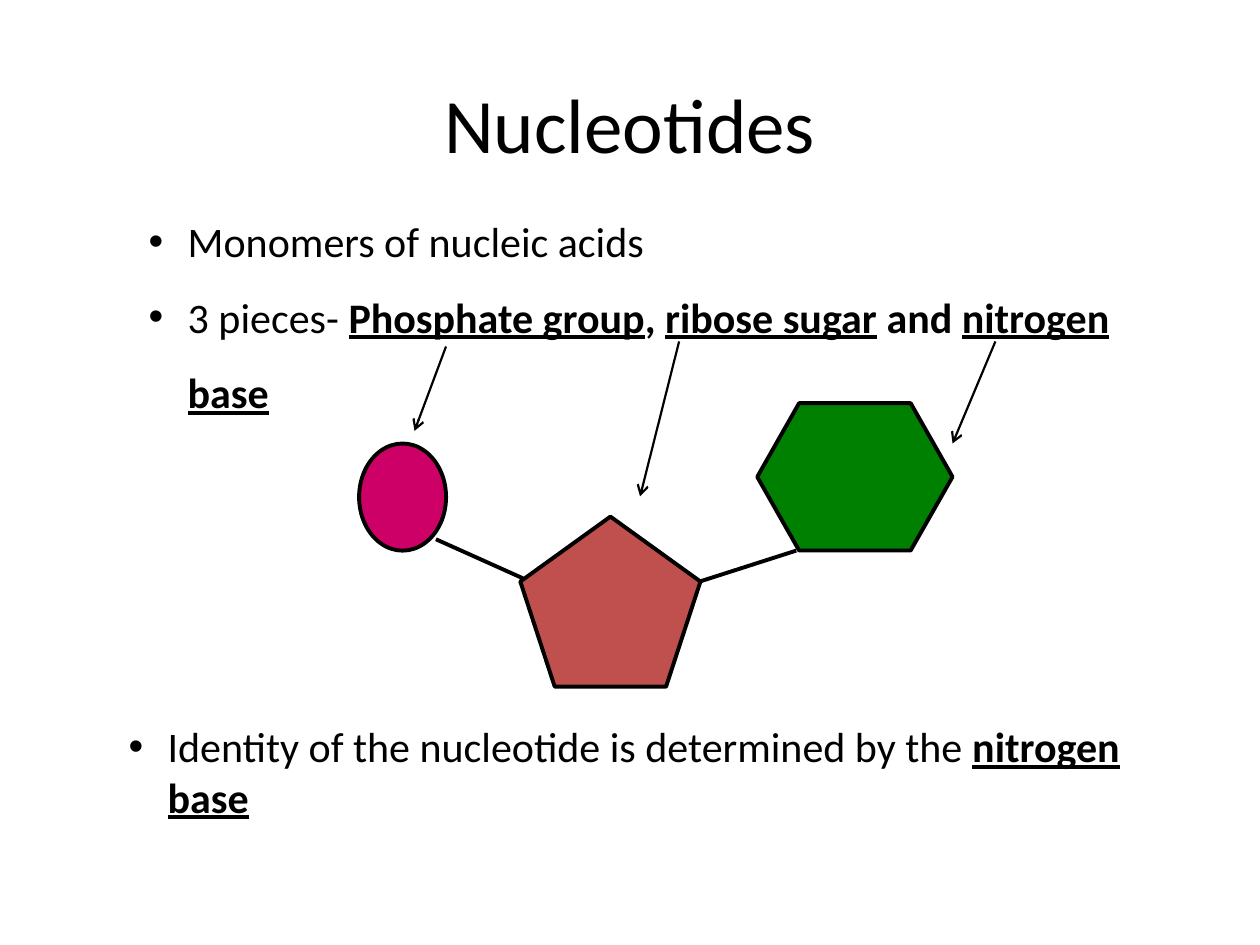
import pptx
import pptx.dml.color
import pptx.enum.shapes
import pptx.enum.text
import pptx.oxml.ns
import pptx.oxml.xmlchemy
import pptx.util
from pptx.util import Inches

SHAPE = pptx.enum.shapes.MSO_SHAPE
THEME = {
    "font": "Calibri", "ink": "000000",
    "title_size": 44, "body_size": 24,
    "outline": 2.25, "pointer": 1.25,
    "phosphate": "CC0066", "sugar": "C0504D", "base": "008000",
}

# Content: boxes are left, top, width, height in inches
TITLE = "Nucleotides"
TITLE_BOX = (0.75, 0.17, 8.5, 1.61)
PLAIN, BOLD, KEY = (False, False), (True, False), (True, True)  # bold, underline
LISTS = [
    {"box": (1.08, 1.46, 8.25, 4.34), "line_spacing": 1.5, "items": [
        [("Monomers of nucleic acids", PLAIN)],
        [("3 pieces- ", PLAIN), ("Phosphate group", KEY), (", ", BOLD),
         ("ribose sugar", KEY), (" and ", BOLD), ("nitrogen base", KEY)],
    ]},
    {"box": (0.92, 5.67, 8.33, 0.91), "line_spacing": 1.0, "items": [
        [("Identity of the nucleotide is determined by the ", PLAIN),
         ("nitrogen base", KEY)],
    ]},
]
PIECES = [
    (SHAPE.OVAL, (2.85, 3.52, 0.69, 0.85), "phosphate", ()),
    (SHAPE.REGULAR_PENTAGON, (4.13, 4.1, 1.43, 1.35), "sugar", ()),
    (SHAPE.HEXAGON, (6.01, 3.2, 1.55, 1.17), "base", (0.284,)),
]
BONDS = [(3.46, 4.28, 4.15, 4.59), (5.54, 4.62, 6.32, 4.37)]
POINTERS = [(3.54, 2.75, 3.29, 3.42), (5.39, 2.71, 5.08, 3.94),
            (7.9, 2.71, 7.56, 3.52)]


def inches(values):
    return [Inches(value) for value in values]


def color(key):
    return pptx.dml.color.RGBColor.from_string(THEME[key])


def place(holder, box):
    holder.left, holder.top, holder.width, holder.height = inches(box)


def add_element(parent, tag, **attributes):
    element = pptx.oxml.xmlchemy.OxmlElement(tag)
    for key, value in attributes.items():
        element.set(key, value)
    parent.append(element)


def add_run(paragraph, text, size, style=PLAIN):
    run = paragraph.add_run()
    run.text = text
    font = run.font
    font.name, font.size = THEME["font"], pptx.util.Pt(THEME[size])
    font.color.rgb = color("ink")
    font.bold, font.underline = style


def add_bullet(paragraph):
    properties = paragraph._p.get_or_add_pPr()
    properties.set("marL", str(Inches(0.31)))
    properties.set("indent", str(-Inches(0.31)))
    add_element(properties, "a:buChar", char="•")


def fill_list(holder, content):
    place(holder, content["box"])
    frame = holder.text_frame
    frame.word_wrap = True
    frame.auto_size = pptx.enum.text.MSO_AUTO_SIZE.SHAPE_TO_FIT_TEXT
    for number, item in enumerate(content["items"]):
        paragraph = frame.add_paragraph() if number else frame.paragraphs[0]
        add_bullet(paragraph)
        paragraph.line_spacing = content["line_spacing"]
        paragraph.space_before = pptx.util.Pt(0)
        for text, style in item:
            add_run(paragraph, text, "body_size", style)


def style_line(line, width):
    line.color.rgb = color("ink")
    line.width = pptx.util.Pt(THEME[width])


def add_line(shapes, ends, width, arrow=False):
    connector = shapes.add_connector(
        pptx.enum.shapes.MSO_CONNECTOR.STRAIGHT, *inches(ends))
    style_line(connector.line, width)
    properties = connector._element.find(pptx.oxml.ns.qn("p:spPr"))
    if arrow:
        outline = properties.find(pptx.oxml.ns.qn("a:ln"))
        add_element(outline, "a:tailEnd", type="arrow")
    add_element(properties, "a:effectLst")


def main():
    deck = pptx.Presentation()
    deck.slide_width, deck.slide_height = inches((10, 7.5))
    slide = deck.slides.add_slide(deck.slide_layouts.get_by_name("Two Content"))

    # Title and lists
    title, *bodies = slide.placeholders
    place(title, TITLE_BOX)
    title.text_frame.vertical_anchor = pptx.enum.text.MSO_ANCHOR.MIDDLE
    heading = title.text_frame.paragraphs[0]
    heading.alignment = pptx.enum.text.PP_ALIGN.CENTER
    add_run(heading, TITLE, "title_size")
    for body, content in zip(bodies, LISTS):
        fill_list(body, content)

    # Nucleotide: three pieces joined by bonds
    nucleotide = slide.shapes.add_group_shape().shapes
    for kind, box, fill, adjustments in PIECES:
        piece = nucleotide.add_shape(kind, *inches(box))
        piece.shadow.inherit = False
        for number, value in enumerate(adjustments):
            piece.adjustments[number] = value
        piece.fill.solid()
        piece.fill.fore_color.rgb = color(fill)
        style_line(piece.line, "outline")
    for ends in BONDS:
        add_line(nucleotide, ends, "outline")

    # Arrows from the words to the pieces
    for ends in POINTERS:
        add_line(slide.shapes, ends, "pointer", arrow=True)

    deck.save("out.pptx")


if __name__ == "__main__":
    main()
